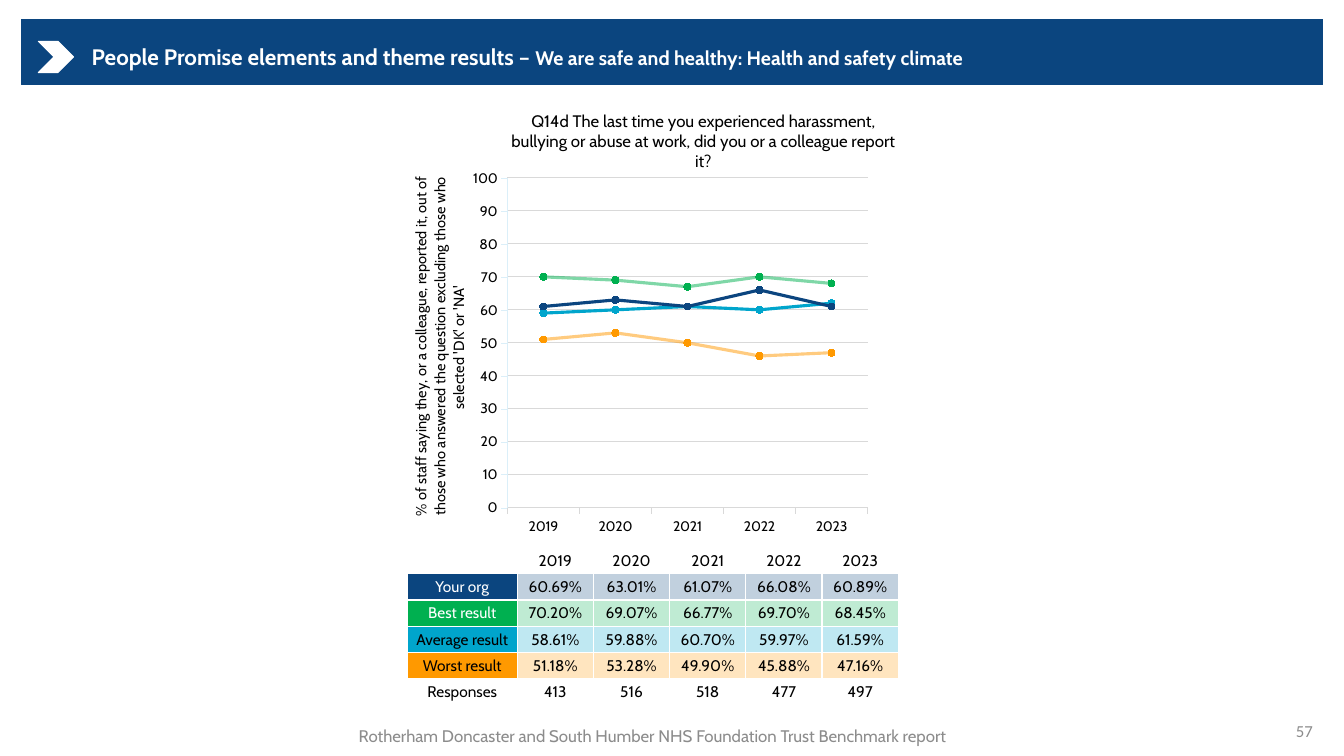
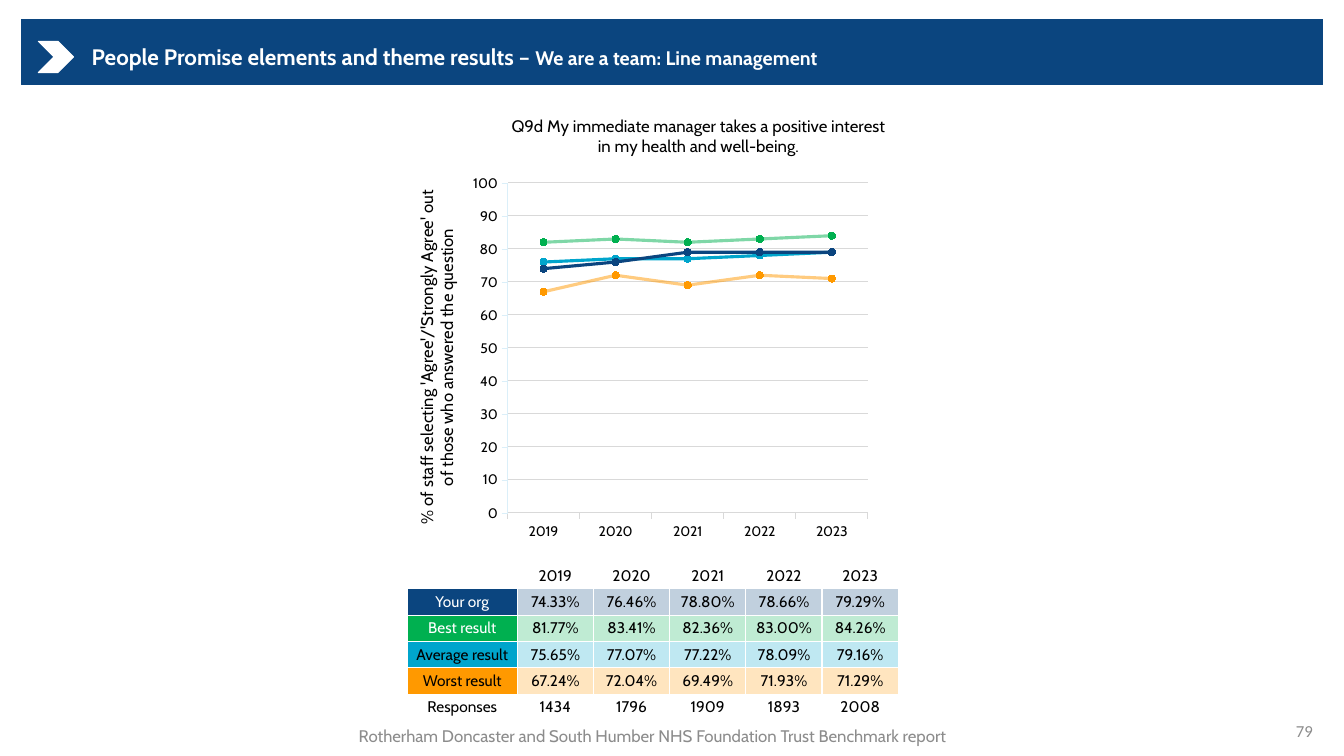
from dataclasses import dataclass
from typing import Any

from lxml.etree import SubElement
from pptx import Presentation
from pptx.chart.data import CategoryChartData
from pptx.dml.color import RGBColor
from pptx.enum.chart import XL_CHART_TYPE, XL_MARKER_STYLE, XL_TICK_MARK
from pptx.enum.shapes import MSO_SHAPE
from pptx.enum.text import MSO_ANCHOR, MSO_AUTO_SIZE, PP_ALIGN
from pptx.oxml.ns import qn
from pptx.util import Emu, Pt

PX = 9144
NAVY = RGBColor(0x0B, 0x45, 0x7F)
GREEN = RGBColor(0x00, 0xB0, 0x50)
CYAN = RGBColor(0x00, 0xA5, 0xCC)
ORANGE = RGBColor(0xFF, 0x99, 0x00)
WHITE = RGBColor(0xFF, 0xFF, 0xFF)
BLACK = RGBColor(0x00, 0x00, 0x00)
GREY = RGBColor(0x8C, 0x8C, 0x8C)
GRID = RGBColor(0xD9, 0xD9, 0xD9)
PALE_BLUE = RGBColor(0xDB, 0xEF, 0xF9)

FONT = "Cabin"
YEARS = ["2019", "2020", "2021", "2022", "2023"]
TITLE_LEAD = "People Promise elements and theme results – "
FOOTER = "Rotherham Doncaster and South Humber NHS Foundation Trust Benchmark report"


@dataclass(frozen=True)
class Group:
    """A result group: its label, its colours and its line opacity in percent."""

    label: str
    color: RGBColor
    label_color: RGBColor
    line_opacity: int


@dataclass(frozen=True)
class Question:
    """One question page; results follow the order of GROUPS."""

    section: str
    number: str
    title: str
    measure: str
    measure_size: float
    measure_left: float
    measure_top: float
    chart_top: int
    table_top: int
    results: list[list[float]]
    responses: list[int]


GROUPS = [
    Group("Your org", NAVY, WHITE, 100),
    Group("Best result", GREEN, WHITE, 50),
    Group("Average result", CYAN, BLACK, 100),
    Group("Worst result", ORANGE, BLACK, 50),
]
DRAWING_ORDER = [2, 1, 3, 0]

QUESTIONS = [
    Question(
        "We are safe and healthy: Health and safety climate", "57",
        "Q14d The last time you experienced harassment, bullying or abuse at work, "
        "did you or a colleague report it?",
        "% of staff saying they, or a colleague, reported it, out of those who answered "
        "the question excluding those who selected 'DK' or 'NA'",
        10.5, 0, 0.19, 93, 543,
        [
            [60.69, 63.01, 61.07, 66.08, 60.89],
            [70.20, 69.07, 66.77, 69.70, 68.45],
            [58.61, 59.88, 60.70, 59.97, 61.59],
            [51.18, 53.28, 49.90, 45.88, 47.16],
        ],
        [413, 516, 518, 477, 497],
    ),
    Question(
        "We are a team: Line management", "79",
        "Q9d My immediate manager takes a positive interest in my health and well-being.",
        "% of staff selecting 'Agree'/'Strongly Agree' out of those who answered the question",
        12, 0.01, 0.21, 98, 558,
        [
            [74.33, 76.46, 78.80, 78.66, 79.29],
            [81.77, 83.41, 82.36, 83.00, 84.26],
            [75.65, 77.07, 77.22, 78.09, 79.16],
            [67.24, 72.04, 69.49, 71.93, 71.29],
        ],
        [1434, 1796, 1909, 1893, 2008],
    ),
]


def px(*lengths: int) -> list[Emu]:
    """Turn pixel lengths into EMU."""
    return [Emu(length * PX) for length in lengths]


def apply(target: Any, **values: Any) -> None:
    """Set each named value on the target."""
    for name, value in values.items():
        setattr(target, name, value)


def format_font(font: Any, size: float, color: RGBColor, name: str = FONT, bold: bool = False) -> None:
    """Give a font its size, colour, typeface and weight."""
    apply(font, size=Pt(size), name=name, bold=bold)
    font.color.rgb = color


def paint(fill: Any, color: RGBColor) -> None:
    """Make a fill solid in one colour."""
    fill.solid()
    fill.fore_color.rgb = color


def format_line(line: Any, color: RGBColor, width: float) -> None:
    """Give a line its colour and width in points."""
    paint(line.fill, color)
    line.width = Pt(width)


def set_opacity(element: Any, percent: int) -> None:
    """Set the opacity of the first colour within an element."""
    color = next(element.iter(qn("a:srgbClr")))
    SubElement(color, qn("a:alpha"), val=str(percent * 1000))


def set_layout(element: Any, index: int, **values: Any) -> None:
    """Place a chart part by fractions of the chart area."""
    for old in element.findall(qn("c:layout")):
        element.remove(old)
    layout = SubElement(element, qn("c:layout"))
    manual = SubElement(layout, qn("c:manualLayout"))
    for name, value in values.items():
        SubElement(manual, qn(f"c:{name}"), val=str(value))
    element.insert(index, layout)


def add_banner(page: Any, layout: Any) -> None:
    """Draw the title band and chevron and move them to the shared layout."""
    parts = [
        (MSO_SHAPE.RECTANGLE, (21, 19, 1291, 65), NAVY),
        (MSO_SHAPE.CHEVRON, (38, 41, 35, 31), WHITE),
    ]
    for position, (kind, place, color) in enumerate(parts):
        shape = page.shapes.add_shape(kind, *px(*place))
        shape.shadow.inherit = False
        paint(shape.fill, color)
        format_line(shape.line, color, 0.75)
        shape._element.nvSpPr.cNvPr.set("id", str(101 + position))
        layout.shapes._spTree.insert(2 + position, shape._element)


def add_title(page: Any, section: str) -> None:
    """Fill the title placeholder with the lead and the section name."""
    title = page.shapes.title
    left, top, width, height = px(81, 36, 961, 44)
    apply(title, left=left, top=top, width=width, height=height)
    frame = title.text_frame
    apply(frame, vertical_anchor=MSO_ANCHOR.MIDDLE, auto_size=MSO_AUTO_SIZE.NONE, word_wrap=True)
    para = frame.paragraphs[0]
    apply(para, alignment=PP_ALIGN.LEFT, line_spacing=0.9)
    for text, size in ((TITLE_LEAD, 16), (section, 14)):
        span = para.add_run()
        span.text = text
        format_font(span.font, size, WHITE, bold=True)


def add_note(page: Any, text: str, place: tuple[int, int, int, int], alignment: Any, font: str) -> None:
    """Add a grey line of text at the foot of the page."""
    box = page.shapes.add_textbox(*px(*place))
    apply(box.text_frame, word_wrap=True, vertical_anchor=MSO_ANCHOR.MIDDLE)
    para = box.text_frame.paragraphs[0]
    para.alignment = alignment
    span = para.add_run()
    span.text = text
    format_font(span.font, 12, GREY, font)


def fill_chart_title(title: Any, text: str, size: float, left: float, top: float) -> None:
    """Write a chart or axis title and place it."""
    para = title.text_frame.paragraphs[0]
    span = para.add_run()
    span.text = text
    format_font(span.font, size, BLACK)
    set_layout(title._element, 1, xMode="edge", yMode="edge", x=left, y=top)


def add_trend_chart(page: Any, question: Question) -> None:
    """Add the line chart of the rounded results by year."""
    data = CategoryChartData()
    data.categories = YEARS
    for index in DRAWING_ORDER:
        data.add_series(GROUPS[index].label, [round(value) for value in question.results[index]])
    place = px(404, question.chart_top, 487, 437)
    chart = page.shapes.add_chart(XL_CHART_TYPE.LINE_MARKERS, *place, data).chart
    chart.has_legend = False
    format_font(chart.font, 10, BLACK)
    chart.has_title = True
    fill_chart_title(chart.chart_title, question.title, 12, 0.206, 0.03)
    set_layout(
        chart._chartSpace.chart.plotArea, 0, layoutTarget="inner", xMode="edge", yMode="edge",
        x=0.204, y=0.193, w=0.734, h=0.756,
    )

    value_axis = chart.value_axis
    apply(value_axis, minimum_scale=0, maximum_scale=100, major_unit=10, has_major_gridlines=True)
    format_line(value_axis.major_gridlines.format.line, GRID, 0.75)
    for axis, color, width in ((value_axis, PALE_BLUE, 0.25), (chart.category_axis, GRID, 0.75)):
        axis.major_tick_mark = XL_TICK_MARK.OUTSIDE
        format_line(axis.format.line, color, width)
        format_font(axis.tick_labels.font, 10, BLACK)
    value_axis.has_title = True
    measure = value_axis.axis_title
    fill_chart_title(
        measure, question.measure, question.measure_size, question.measure_left, question.measure_top
    )
    body = measure.text_frame._txBody.bodyPr
    for name, value in {"rot": "-5400000", "vert": "horz"}.items():
        body.set(name, value)

    plot = chart.plots[0]
    plot.vary_by_categories = False
    for series, index in zip(plot.series, DRAWING_ORDER):
        group = GROUPS[index]
        series.smooth = False
        format_line(series.format.line, group.color, 2.25)
        if group.line_opacity < 100:
            set_opacity(series._element, group.line_opacity)
        apply(series.marker, style=XL_MARKER_STYLE.CIRCLE, size=5)
        paint(series.marker.format.fill, group.color)
        format_line(series.marker.format.line, group.color, 0.75)


def add_borders(cell: Any) -> None:
    """Give a cell white borders on its four sides."""
    properties = cell._tc.get_or_add_tcPr()
    for index, side in enumerate(("lnL", "lnR", "lnT", "lnB")):
        border = SubElement(properties, qn(f"a:{side}"), w=str(Pt(1)))
        fill = SubElement(border, qn("a:solidFill"))
        SubElement(fill, qn("a:srgbClr"), val=str(WHITE))
        properties.insert(index, border)


def fill_cell(cell: Any, text: str, group: Group | None, is_label: bool) -> None:
    """Write one table cell in the colours of its group."""
    apply(
        cell, vertical_anchor=MSO_ANCHOR.MIDDLE,
        margin_left=0, margin_right=0, margin_top=0, margin_bottom=0,
    )
    para = cell.text_frame.paragraphs[0]
    para.alignment = PP_ALIGN.CENTER
    if text:
        span = para.add_run()
        span.text = text
        format_font(span.font, 11, group.label_color if group and is_label else BLACK)
    else:
        SubElement(para._p, qn("a:endParaRPr"), sz="1100")
    if group:
        paint(cell.fill, group.color)
        if not is_label:
            set_opacity(cell._tc.tcPr, 25)
    else:
        cell.fill.background()
    add_borders(cell)


def add_results_table(page: Any, question: Question) -> None:
    """Add the table of results and response counts by year."""
    rows: list[tuple[Group | None, list[str]]] = [(None, ["", *YEARS])]
    for group, values in zip(GROUPS, question.results):
        rows.append((group, [group.label, *(f"{value:.2f}%" for value in values)]))
    rows.append((None, ["Responses", *map(str, question.responses)]))

    left, top, width, height, label_width = px(404, question.table_top, 487, 157, 109)
    table = page.shapes.add_table(len(rows), len(YEARS) + 1, left, top, width, height).table
    apply(table, first_row=False, horz_banding=False)
    for index, column in enumerate(table.columns):
        column.width = Emu((width - label_width) // len(YEARS)) if index else label_width
    for row_index, (group, texts) in enumerate(rows):
        for column_index, text in enumerate(texts):
            fill_cell(table.cell(row_index, column_index), text, group, column_index == 0)


def main() -> None:
    """Build the deck and save it."""
    deck = Presentation()
    deck.slide_width, deck.slide_height = px(1333, 750)
    layout = deck.slide_layouts[5]
    for index, question in enumerate(QUESTIONS):
        page = deck.slides.add_slide(layout)
        if index == 0:
            add_banner(page, layout)
        add_title(page, question.section)
        add_results_table(page, question)
        add_trend_chart(page, question)
        add_note(page, question.number, (1012, 705, 300, 40), PP_ALIGN.RIGHT, "Calibri")
        add_note(page, FOOTER, (295, 710, 705, 39), PP_ALIGN.CENTER, FONT)
    deck.save("out.pptx")


if __name__ == "__main__":
    main()
